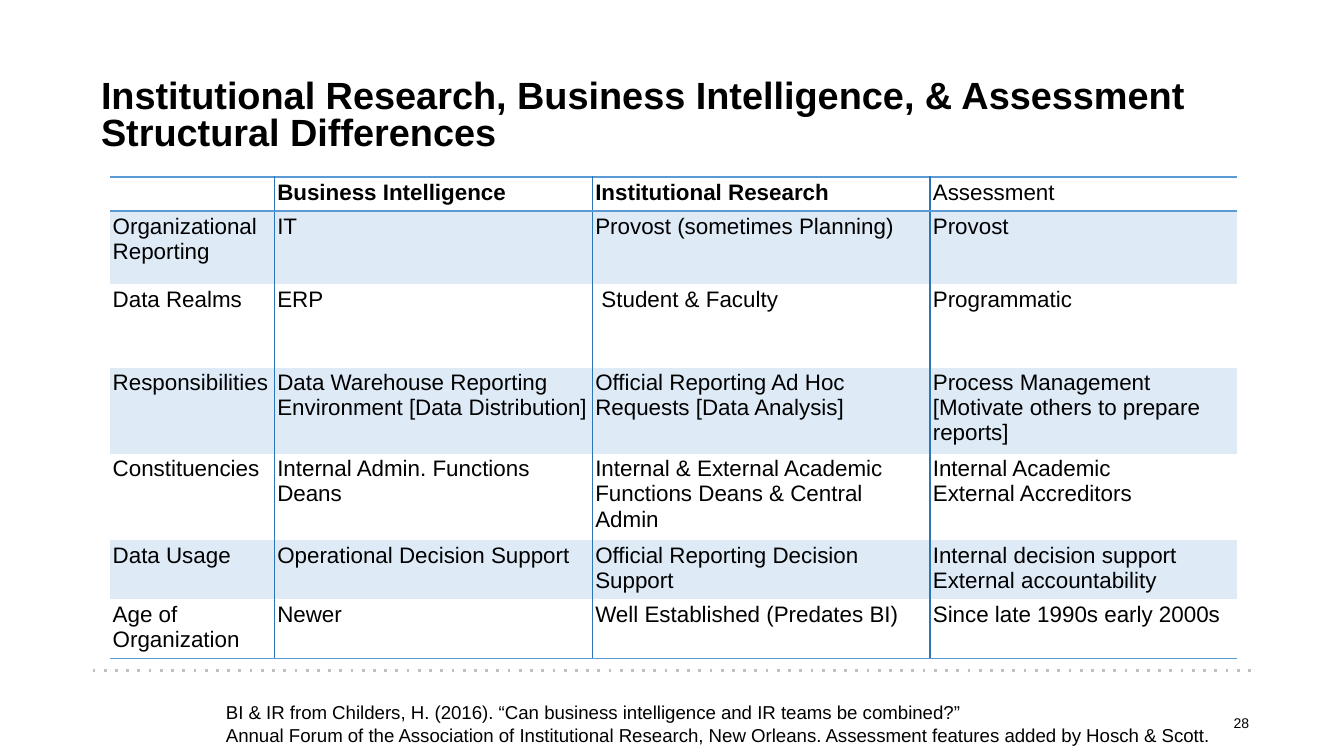
from lxml import etree
from pptx import Presentation, util as u
from pptx.dml.color import RGBColor
from pptx.enum import shapes, text
from pptx.oxml.ns import qn

HEX = {"ink": "000000", "band": "DEEBF7", "rule": "5B9BD5",
       "split": "2E75B5", "dots": "C0C0C0"}
PLAIN = "{2D5ABB26-0587-4C30-8999-92F81FD0307C}"  # no style, no grid


def color(name):
    return RGBColor.from_string(HEX[name])


class Deck:
    font = "Arial"

    def __init__(self, wide, high):
        self.prs = Presentation()
        self.prs.slide_width, self.prs.slide_height = u.Cm(wide), u.Cm(high)
        self.slide = self.prs.slides.add_slide(self.prs.slide_layouts[6])

    def style(self, frame, size, bold=False, space=None, align=None):
        for para in frame.paragraphs:
            para.line_spacing = space
            para.alignment = align
            for run in para.runs:
                run.font.name = self.font
                run.font.size = u.Pt(size)
                run.font.bold = bold
                run.font.color.rgb = color("ink")
            if not para.runs:
                end = etree.SubElement(para._p, qn("a:endParaRPr"))
                end.set("sz", str(size * 100))

    def label(self, words, box, size, **look):
        frame = self.slide.shapes.add_textbox(*map(u.Cm, box)).text_frame
        frame.word_wrap = True
        frame.text = words
        self.style(frame, size, **look)

    def line(self, x1, y1, x2, y2, name, width):
        rule = self.slide.shapes.add_connector(
            shapes.MSO_CONNECTOR.STRAIGHT, *map(u.Cm, (x1, y1, x2, y2)))
        rule.line.color.rgb = color(name)
        rule.line.width = u.Pt(width)
        props = rule._element.spPr
        etree.SubElement(props.find(qn("a:ln")), qn("a:prstDash"), val="dot")
        etree.SubElement(props, qn("a:effectLst"))

    def edges(self, cell, sides):
        props = cell._tc.get_or_add_tcPr()
        for spot, (side, name) in enumerate(sides):
            edge = etree.Element(qn("a:ln" + side), w=str(u.Pt(1)))
            fill = etree.SubElement(edge, qn("a:solidFill"))
            etree.SubElement(fill, qn("a:srgbClr"), val=HEX[name])
            props.insert(spot, edge)

    def table(self, rows, left, top, widths, heights):
        last, end = len(rows) - 1, len(widths) - 1
        frame = self.slide.shapes.add_table(
            len(rows), len(widths), u.Cm(left), u.Cm(top),
            u.Cm(sum(widths)), u.Cm(sum(heights)))
        grid = frame.table
        grid.first_row = grid.horz_banding = False
        grid._tbl.tblPr.find(qn("a:tableStyleId")).text = PLAIN
        for col, width in zip(grid.columns, widths):
            col.width = u.Cm(width)
        for row, height in zip(grid.rows, heights):
            row.height = u.Cm(height)
        for r, row in enumerate(rows):
            for c, words in enumerate(row):
                cell = grid.cell(r, c)
                cell.margin_left = cell.margin_right = u.Cm(0.05)
                cell.margin_top = cell.margin_bottom = u.Cm(0.05)
                cell.text = words
                self.style(cell.text_frame, 12, r == 0 and c in (1, 2), 1.0)
                if r % 2:
                    cell.fill.solid()
                    cell.fill.fore_color.rgb = color("band")
                else:
                    cell.fill.background()
                # Borders in schema order: left, right, top, bottom
                tests = (("L", "split", c > 0), ("R", "split", c < end),
                         ("T", "rule", r == 0), ("B", "rule", r in (0, last)))
                self.edges(cell, [(s, n) for s, n, on in tests if on])


ROWS = [
    ("", "Business Intelligence", "Institutional Research", "Assessment"),
    ("Organizational Reporting", "IT", "Provost (sometimes Planning)", "Provost"),
    ("Data Realms", "ERP", " Student & Faculty", "Programmatic"),
    ("Responsibilities",
     "Data Warehouse Reporting Environment [Data Distribution]",
     "Official Reporting Ad Hoc Requests [Data Analysis]",
     "Process Management\n[Motivate others to prepare reports]"),
    ("Constituencies", "Internal Admin. Functions\nDeans",
     "Internal & External Academic Functions Deans & Central Admin",
     "Internal Academic\nExternal Accreditors"),
    ("Data Usage", "Operational Decision Support",
     "Official Reporting Decision Support",
     "Internal decision support\nExternal accountability"),
    ("Age of Organization", "Newer", "Well Established (Predates BI)",
     "Since late 1990s early 2000s"),
]


def main():
    deck = Deck(25.4, 14.29)

    # Dotted footer rule
    deck.line(1.75, 12.68, 23.67, 12.68, "dots", 1.5)

    # Title
    deck.label("Institutional Research, Business Intelligence, & Assessment\v"
               "Structural Differences",
               (1.66, 1.37, 22.2, 1.7), 20.3, bold=True, space=0.83)

    # Page number
    deck.label("28", (18.14, 13.39, 5.72, 0.76), 7.5,
               align=text.PP_ALIGN.RIGHT)

    # Comparison table
    deck.table(ROWS, 2.08, 3.35, (3.11, 6.01, 6.38, 5.8),
               (0.64, 1.38, 1.58, 1.63, 1.63, 1.12, 1.12))

    # Source note
    deck.label("BI & IR from Childers, H. (2016). “Can business intelligence "
               "and IR teams be combined?”\n"
               "Annual Forum of the Association of Institutional Research, "
               "New Orleans. Assessment features added by Hosch & Scott.",
               (4.02, 13.13, 19.18, 1.12), 10)

    deck.prs.save("out.pptx")


if __name__ == "__main__":
    main()
